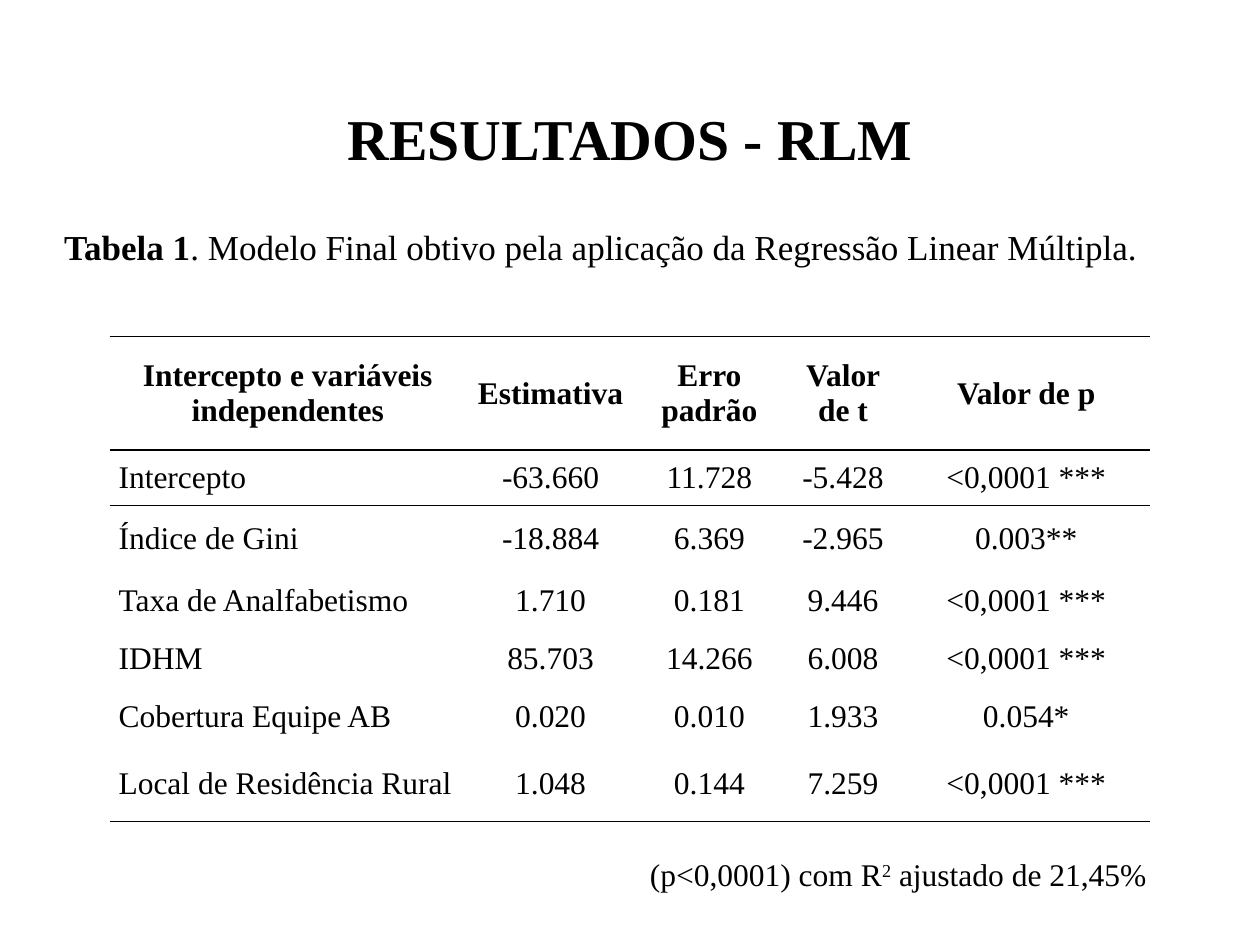
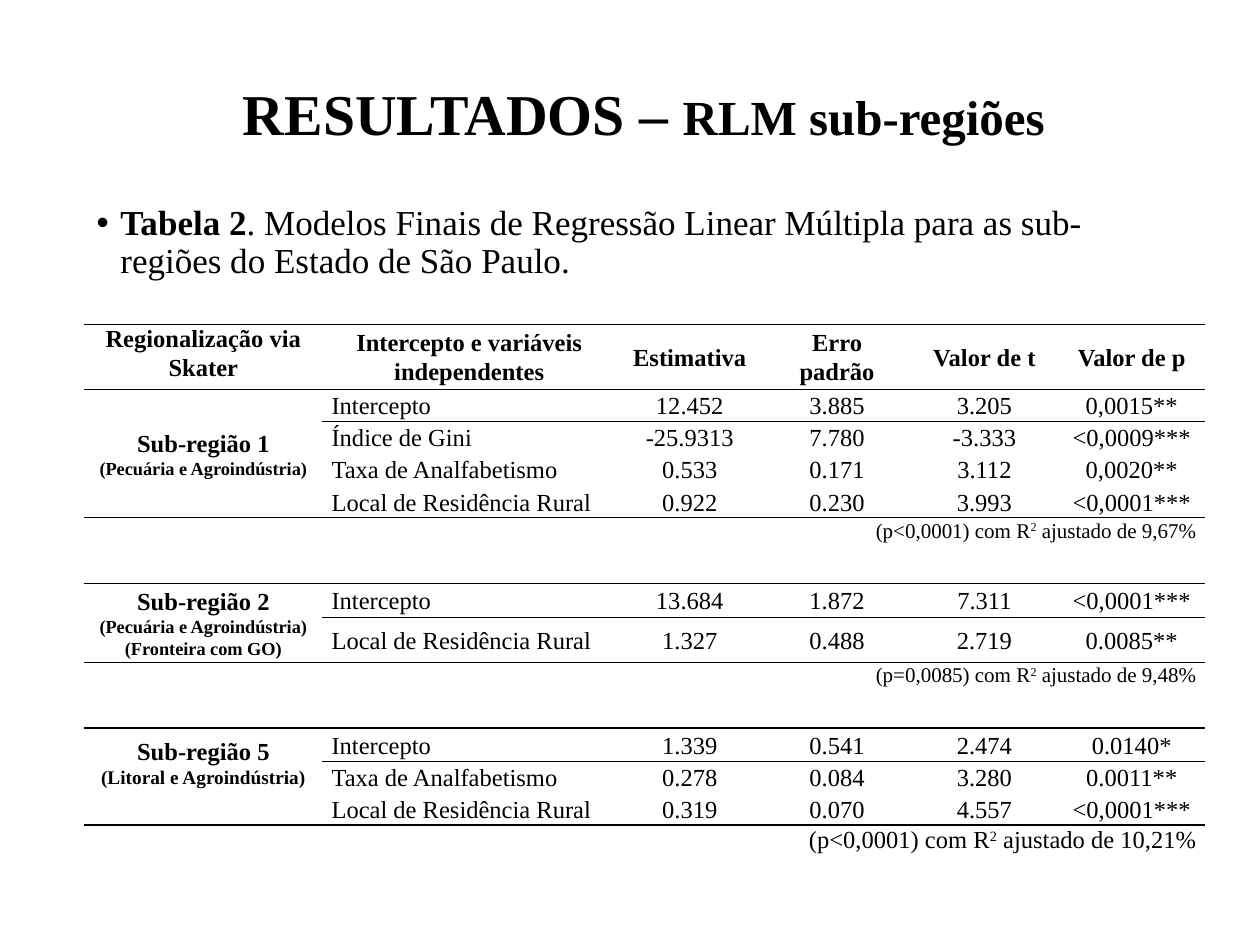
from lxml import etree
from pptx import Presentation
from pptx.dml.color import RGBColor
from pptx.enum.text import MSO_ANCHOR as Anchor, PP_ALIGN as Align
from pptx.oxml.ns import qn
from pptx.util import Pt

FONT, INK = "Times New Roman", "000000"
NO_STYLE = "{2D5ABB26-0587-4C30-8999-92F81FD0307C}"

TITLE_1 = [("RESULTADOS - RLM", 33)]
TITLE_2 = [("RESULTADOS – ", 33), ("RLM sub-regiões", 28)]
CAPTION_1 = ("Tabela 1", ". Modelo Final obtivo pela aplicação da Regressão Linear Múltipla.")
CAPTION_2 = ("Tabela 2", ". Modelos Finais de Regressão Linear Múltipla para as sub-regiões do Estado de São Paulo.")
NOTE_1 = ("(p<0,0001)", "21,45%")

HEADER = ["Intercepto e variáveis independentes", "Estimativa", "Erro padrão", "Valor de t", "Valor de p"]
MODEL = [
    ("Intercepto", "-63.660", "11.728", "-5.428", "<0,0001 ***"),
    ("Índice de Gini", "-18.884", "6.369", "-2.965", "0.003**"),
    ("Taxa de Analfabetismo", "1.710", "0.181", "9.446", "<0,0001 ***"),
    ("IDHM", "85.703", "14.266", "6.008", "<0,0001 ***"),
    ("Cobertura Equipe AB", "0.020", "0.010", "1.933", "0.054*"),
    ("Local de Residência Rural", "1.048", "0.144", "7.259", "<0,0001 ***"),
]
MODEL_COLS = [203.8, 96.5, 85, 67.7, 141.8]
MODEL_HEIGHTS = [64.8, 31.7, 38.2, 33.1, 32.4, 33.8, 43.2]

REGION_HEADER = "Regionalização via Skater"
REGIONS = [
    dict(name="Sub-região 1", details=["(Pecuária e Agroindústria)"], detail_size=10.5, lift=0,
         rows=[("Intercepto", "12.452", "3.885", "3.205", "0,0015**"),
               ("Índice de Gini", "-25.9313", "7.780", "-3.333", "<0,0009***"),
               ("Taxa de Analfabetismo", "0.533", "0.171", "3.112", "0,0020**"),
               ("Local de Residência Rural", "0.922", "0.230", "3.993", "<0,0001***")],
         heights=[18.3, 17.7, 18.9, 16.3],
         note=("(p<0,0001)", "9,67%"), note_size=12, note_height=37.7),
    dict(name="Sub-região 2", details=["(Pecuária e Agroindústria)", "(Fronteira com GO)"],
         detail_size=10.5, lift=0,
         rows=[("Intercepto", "13.684", "1.872", "7.311", "<0,0001***"),
               ("Local de Residência Rural", "1.327", "0.488", "2.719", "0.0085**")],
         heights=[19.4, 22.3],
         note=("(p=0,0085)", "9,48%"), note_size=12, note_height=37.7),
    dict(name="Sub-região 5", details=["(Litoral e Agroindústria)"], detail_size=11, lift=16,
         rows=[("Intercepto", "1.339", "0.541", "2.474", "0.0140*"),
               ("Taxa de Analfabetismo", "0.278", "0.084", "3.280", "0.0011**"),
               ("Local de Residência Rural", "0.319", "0.070", "4.557", "<0,0001***")],
         heights=[19, 18.4, 16.3],
         note=("(p<0,0001)", "10,21%"), note_size=14, note_height=18),
]
REGION_COLS = [136.1, 167.8] + [84.2] * 4
REGION_HEADER_HEIGHT = 37.4


def color(value):
    return RGBColor.from_string(value)


def write(p, text, size=18, bold=False, raised=False, align=None, spacing=None):
    r = p.add_run()
    r.text = text
    r.font.name, r.font.size, r.font.bold = FONT, Pt(size), bold
    r.font.color.rgb = color(INK)
    if raised:
        r._r.get_or_add_rPr().set("baseline", "30000")
    if align is not None:
        p.alignment = align
    if spacing:
        p.line_spacing = spacing


def write_note(p, note, **fmt):
    significance, share = note
    write(p, f"{significance} com R", **fmt)
    write(p, "2", raised=True, **fmt)
    write(p, f" ajustado de {share}", **fmt)


def add_text_box(s, box, anchor=Anchor.TOP, wrap=True):
    tf = s.shapes.add_textbox(*map(Pt, box)).text_frame
    tf.word_wrap, tf.vertical_anchor = wrap, anchor
    return tf.paragraphs[0]


def add_title(s, parts, box):
    p = add_text_box(s, box, Anchor.MIDDLE)
    for text, size in parts:
        write(p, text, size=size, bold=True, align=Align.CENTER, spacing=0.9)


def add_caption(s, caption, box, bullet=False):
    p = add_text_box(s, box)
    label, text = caption
    write(p, label, size=20, bold=True, spacing=0.9)
    write(p, text, size=20)
    if bullet:
        pPr = p._p.get_or_add_pPr()
        pPr.set("marL", str(Pt(13.5)))
        pPr.set("indent", str(-Pt(13.5)))
        etree.SubElement(pPr, qn("a:buFont")).set("typeface", "Arial")
        etree.SubElement(pPr, qn("a:buChar")).set("char", "•")


def add_plain_table(s, left, top, cols, heights):
    box = map(Pt, (left, top, sum(cols), sum(heights)))
    frame = s.shapes.add_table(len(heights), len(cols), *box)
    table = frame.table
    table._tbl.tblPr.find(qn("a:tableStyleId")).text = NO_STYLE
    table.first_row = table.horz_banding = False
    for column, width in zip(table.columns, cols):
        column.width = Pt(width)
    for row, height in zip(table.rows, heights):
        row.height = Pt(height)
    for cell in table.iter_cells():
        cell.margin_left = cell.margin_right = Pt(5.2)
        cell.margin_top = cell.margin_bottom = 0
        cell.vertical_anchor = Anchor.MIDDLE
    return table


def add_border(cell, side):
    ln = etree.SubElement(cell._tc.get_or_add_tcPr(), qn(f"a:{side}"), w=str(Pt(1)))
    fill = etree.SubElement(ln, qn("a:solidFill"))
    etree.SubElement(fill, qn("a:srgbClr")).set("val", INK)


def finish_table(table, rules):
    for i, row in enumerate(table.rows):
        for cell in row.cells:
            last = i + (cell.span_height if cell.is_merge_origin else 1)
            if i in rules:
                add_border(cell, "lnT")
            if last in rules:
                add_border(cell, "lnB")
            cell.fill.background()


def fill_row(table, row, values, first=0, **fmt):
    for i, text in enumerate(values):
        align = Align.CENTER if i or fmt.get("bold") else Align.LEFT
        p = table.cell(row, first + i).text_frame.paragraphs[0]
        write(p, text, align=align, **fmt)


def build_model_slide(s):
    add_title(s, TITLE_1, (49.7, 28.8, 620.6, 104.4))
    add_caption(s, CAPTION_1, (29.5, 128.2, 654.5, 40))
    table = add_plain_table(s, 62.6, 192.4, MODEL_COLS, MODEL_HEIGHTS)
    fill_row(table, 0, HEADER, bold=True)
    for i, values in enumerate(MODEL, 1):
        fill_row(table, i, values)
    finish_table(table, {0, 1, len(MODEL_HEIGHTS)})
    write_note(add_text_box(s, (364.3, 485.3, 301.7, 28.8), wrap=False), NOTE_1)


def build_regions_slide(s):
    add_title(s, TITLE_2, (36, 21.6, 663.8, 90))
    add_caption(s, CAPTION_2, (48.2, 113.8, 620.6, 60), bullet=True)
    heights = [REGION_HEADER_HEIGHT]
    for region in REGIONS:
        heights += region["heights"] + [region["note_height"]]
    table = add_plain_table(s, 48.2, 185.3, REGION_COLS, heights)
    fmt = dict(size=14, spacing=1.07)
    fill_row(table, 0, [REGION_HEADER] + HEADER, bold=True, **fmt)
    table.cell(0, 0).vertical_anchor = Anchor.TOP
    rules, row = {0}, 1
    for region in REGIONS:
        note_row = row + len(region["rows"])
        rules |= {row, note_row}
        label = table.cell(row, 0)
        label.merge(table.cell(note_row - 1, 0))
        label.margin_bottom = Pt(region["lift"])
        tf = label.text_frame
        write(tf.paragraphs[0], region["name"], bold=True, align=Align.CENTER, **fmt)
        for detail in region["details"]:
            write(tf.add_paragraph(), detail, size=region["detail_size"], bold=True,
                  align=Align.CENTER, spacing=1.07)
        for i, values in enumerate(region["rows"], row):
            fill_row(table, i, values, first=1, **fmt)
        note = table.cell(note_row, 0)
        note.merge(table.cell(note_row, len(REGION_COLS) - 1))
        note.vertical_anchor = Anchor.TOP
        write_note(note.text_frame.paragraphs[0], region["note"], size=region["note_size"],
                   align=Align.RIGHT, spacing=1.07)
        row = note_row + 1
    finish_table(table, rules)


def main():
    prs = Presentation()
    prs.slide_width, prs.slide_height = Pt(720), Pt(540)
    for build in (build_model_slide, build_regions_slide):
        build(prs.slides.add_slide(prs.slide_layouts[6]))
    prs.save("out.pptx")


if __name__ == "__main__":
    main()
